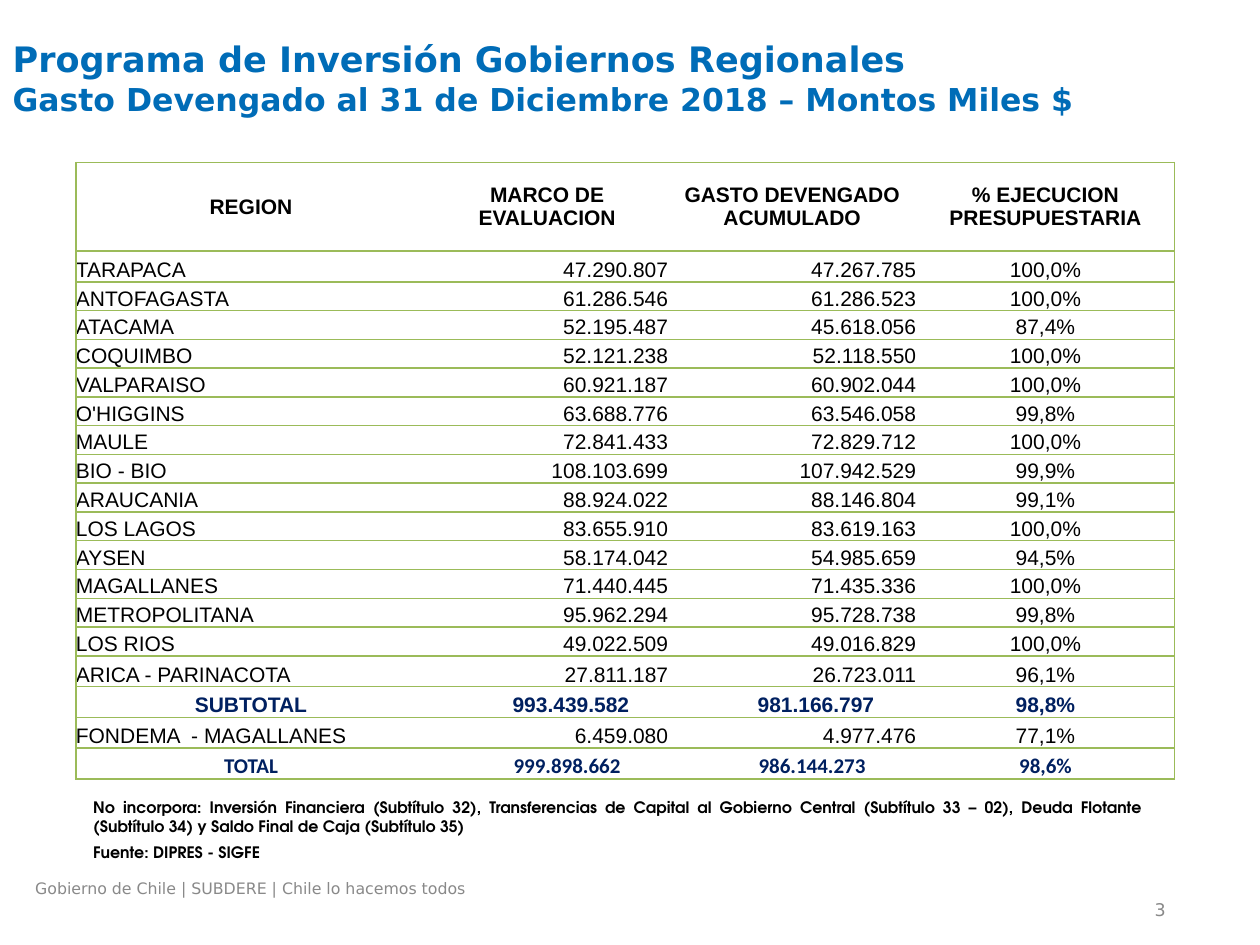
"""Build the regional investment spending slide."""
from lxml.etree import SubElement as Sub
from pptx import Presentation
from pptx.dml.color import RGBColor as Rgb
from pptx.enum.text import MSO_ANCHOR as Anchor, MSO_AUTO_SIZE as Fit, PP_ALIGN as Align
from pptx.oxml.ns import qn
from pptx.util import Cm, Pt

HUES = {"blue": "006CB7", "grey": "898989", "black": "000000",
        "navy": "002060", "green": "9BBB59", "white": "FFFFFF"}
SANS = "DejaVu Sans"
HEAD = ["REGION", "MARCO DE EVALUACION", "GASTO DEVENGADO ACUMULADO",
        "% EJECUCION PRESUPUESTARIA"]
ROWS = [
    ("TARAPACA", "47.290.807", "47.267.785", "100,0%"),
    ("ANTOFAGASTA", "61.286.546", "61.286.523", "100,0%"),
    ("ATACAMA", "52.195.487", "45.618.056", "87,4%"),
    ("COQUIMBO", "52.121.238", "52.118.550", "100,0%"),
    ("VALPARAISO", "60.921.187", "60.902.044", "100,0%"),
    ("O'HIGGINS", "63.688.776", "63.546.058", "99,8%"),
    ("MAULE", "72.841.433", "72.829.712", "100,0%"),
    ("BIO - BIO", "108.103.699", "107.942.529", "99,9%"),
    ("ARAUCANIA", "88.924.022", "88.146.804", "99,1%"),
    ("LOS LAGOS", "83.655.910", "83.619.163", "100,0%"),
    ("AYSEN", "58.174.042", "54.985.659", "94,5%"),
    ("MAGALLANES", "71.440.445", "71.435.336", "100,0%"),
    ("METROPOLITANA", "95.962.294", "95.728.738", "99,8%"),
    ("LOS RIOS", "49.022.509", "49.016.829", "100,0%"),
    ("ARICA - PARINACOTA", "27.811.187", "26.723.011", "96,1%"),
    ("SUBTOTAL", "993.439.582", "981.166.797", "98,8%"),
    ("FONDEMA  - MAGALLANES", "6.459.080", "4.977.476", "77,1%"),
    ("TOTAL", "999.898.662", "986.144.273", "98,6%"),
]
SUMS = {"SUBTOTAL": ("Arial", 0.96), "TOTAL": ("Calibri", 0.8)}
WIDTHS = [7.06, 4.88, 5, 5.21]
NOTES = [
    ("No incorpora: Inversión Financiera (Subtítulo 32), Transferencias de Capital "
     "al Gobierno Central (Subtítulo 33 – 02), Deuda Flotante (Subtítulo 34) y "
     "Saldo Final de Caja (Subtítulo 35)", Align.JUSTIFY),
    ("Fuente: DIPRES - SIGFE", Align.LEFT),
]


def add_run(para, text, size, face, hue, bold=False):
    """Add one formatted run to a paragraph."""
    run = para.add_run()
    run.text = text
    font = run.font
    font.size, font.name, font.bold = Pt(size), face, bold
    font.color.rgb = Rgb.from_string(HUES[hue])


def add_title(slide):
    """Place the title and fill its two lines."""
    title = slide.shapes.title
    title.left, title.top = Cm(0), Cm(0.63)
    title.width, title.height = Cm(22.78), Cm(2.39)
    frame = title.text_frame
    frame.auto_size, frame.vertical_anchor = Fit.NONE, Anchor.TOP
    para = frame.paragraphs[0]
    para.alignment = Align.LEFT
    add_run(para, "Programa de Inversión Gobiernos Regionales", 20, SANS, "blue", True)
    para.add_line_break()
    add_run(para, "Gasto Devengado al 31 de Diciembre 2018 – Montos Miles $",
            18, SANS, "blue", True)


def add_box(slide, place, lines, size, face, hue, bold=False, anchor=Anchor.TOP):
    """Add a text box holding pairs of text and alignment."""
    frame = slide.shapes.add_textbox(*map(Cm, place)).text_frame
    frame.word_wrap, frame.vertical_anchor = True, anchor
    for i, (text, align) in enumerate(lines):
        para = frame.add_paragraph() if i else frame.paragraphs[0]
        para.alignment = align
        if i:
            para.space_before = Pt(size / 2)
        add_run(para, text, size, face, hue, bold)


def set_edges(cell, sides):
    """Draw the named cell borders in green and hide the others."""
    props = cell._tc.get_or_add_tcPr()
    for i, side in enumerate("LRTB"):
        line = Sub(props, qn(f"a:ln{side}"), w=str(Pt(1)))
        if side in sides:
            Sub(Sub(line, qn("a:solidFill")), qn("a:srgbClr"), val=HUES["green"])
        else:
            Sub(line, qn("a:noFill"))
        props.insert(i, line)


def set_cell(cell, text, align, anchor, face, hue, bold, inset=0):
    """Fill and format one table cell."""
    cell.margin_left = Cm(inset)
    cell.margin_right = cell.margin_top = cell.margin_bottom = 0
    cell.vertical_anchor = anchor
    cell.fill.solid()
    cell.fill.fore_color.rgb = Rgb.from_string(HUES["white"])
    para = cell.text_frame.paragraphs[0]
    para.alignment = align
    add_run(para, text, 12, face, hue, bold)


def add_grid(slide):
    """Add the spending table."""
    last = len(HEAD) - 1
    frame = slide.shapes.add_table(len(ROWS) + 1, len(HEAD), Cm(1.53), Cm(3.28),
                                   Cm(sum(WIDTHS)), Cm(12.42))
    grid = frame.table
    grid.first_row = grid.horz_banding = False
    for col, width in zip(grid.columns, WIDTHS):
        col.width = Cm(width)
    aligns = [Align.LEFT, Align.RIGHT, Align.RIGHT, Align.CENTER]
    for r, row in enumerate([HEAD, *ROWS]):
        tall = r == 1 or r > 14
        grid.rows[r].height = Cm(1.78 if r == 0 else 0.62 if tall else 0.58)
        face, inset = SUMS.get(row[0], ("Arial", 0))
        total = row[0] in SUMS
        strong = total or r == 0
        for c, text in enumerate(row):
            cell = grid.cell(r, c)
            set_cell(cell, text, Align.CENTER if strong else aligns[c],
                     Anchor.BOTTOM if r else Anchor.MIDDLE, face,
                     "navy" if total else "black", strong,
                     inset if 0 < c < last else 0)
            set_edges(cell, "TB" + {0: "L", last: "R"}.get(c, ""))


def main():
    """Build and save the slide."""
    deck = Presentation()
    deck.slide_width, deck.slide_height = Cm(25.4), Cm(19.05)
    slide = deck.slides.add_slide(deck.slide_layouts[5])
    add_box(slide, (17.83, 18.08, 5.92, 0.53), [("3", Align.RIGHT)],
            10, SANS, "grey", anchor=Anchor.MIDDLE)
    add_title(slide)
    add_box(slide, (0.46, 17.58, 16.46, 0.69),
            [("Gobierno de Chile | SUBDERE | Chile lo hacemos todos", Align.LEFT)],
            9, SANS, "grey")
    add_box(slide, (1.63, 15.95, 21.62, 1.6), NOTES, 9, "TeX Gyre Adventor", "black", True)
    add_grid(slide)
    deck.save("out.pptx")


if __name__ == "__main__":
    main()
